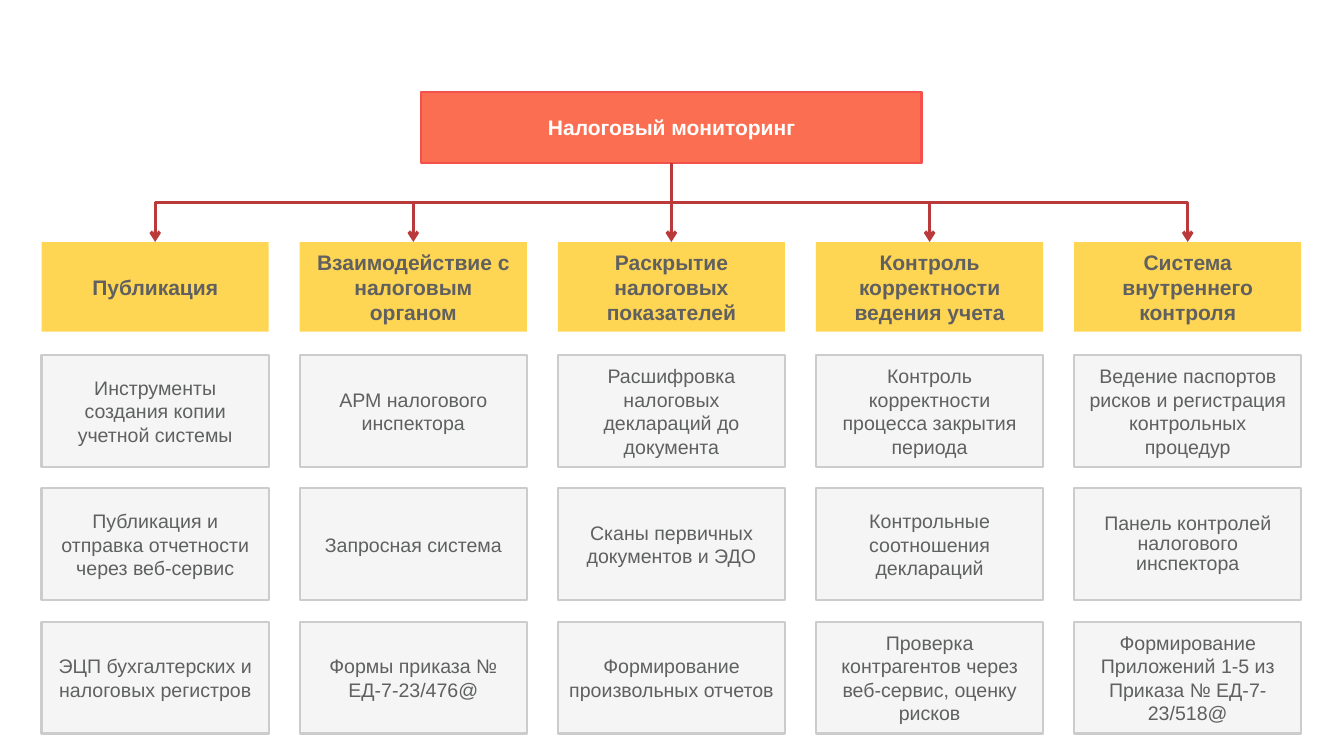
from lxml import etree
from pptx import Presentation
from pptx.dml.color import RGBColor
from pptx.enum.shapes import MSO_CONNECTOR, MSO_SHAPE
from pptx.enum.text import MSO_ANCHOR, MSO_AUTO_SIZE, PP_ALIGN
from pptx.oxml.ns import qn
from pptx.util import Inches, Pt

COLORS = {
    "root": "FC6E51", "root_border": "F3514C", "root_text": "FFFFFF",
    "heading": "FFD653", "heading_text": "606060",
    "card": "F2F2F2", "card_border": "CCCCCC", "card_text": "5F6060",
    "arrow": "BA3A3B",
}

# Grid in inches: five columns, one heading row, three card rows
LEFT, COLUMN_STEP, BOX_WIDTH = 0.39, 2.42, 2.13
HEADING_TOP, HEADING_HEIGHT = 2.27, 0.84
CARD_TOP, CARD_STEP, CARD_HEIGHT = 3.33, 1.25, 1.05
ROOT_WIDTH, ROOT_TOP, ROOT_HEIGHT = 4.69, 0.86, 0.67
CARD_OPACITY = 70

BRANCHES = [
    ("Публикация", [
        "Инструменты создания копии учетной системы",
        "Публикация и отправка отчетности через веб-сервис",
        "ЭЦП бухгалтерских и налоговых регистров"]),
    ("Взаимодействие с налоговым органом", [
        "АРМ налогового инспектора",
        "Запросная система",
        "Формы приказа № ЕД-7-23/476@"]),
    ("Раскрытие налоговых показателей", [
        "Расшифровка налоговых деклараций до документа",
        "Сканы первичных документов и ЭДО",
        "Формирование произвольных отчетов"]),
    ("Контроль корректности ведения учета", [
        "Контроль корректности процесса закрытия периода",
        "Контрольные соотношения деклараций",
        "Проверка контрагентов через веб-сервис, оценку рисков"]),
    ("Система внутреннего контроля", [
        "Ведение паспортов рисков и регистрация контрольных процедур",
        "Панель контролей налогового инспектора",
        "Формирование Приложений 1-5 из Приказа № ЕД-7-23/518@"]),
]
TIGHT_CARD = "Панель контролей налогового инспектора"


def style_box(box, text, role, size, bold):
    """Fill, outline and centre the text of one box of the chart."""
    box.fill.solid()
    box.fill.fore_color.rgb = RGBColor.from_string(COLORS[role])
    if role + "_border" in COLORS:
        box.line.color.rgb = RGBColor.from_string(COLORS[role + "_border"])
        box.line.width = Pt(1.5)
    else:
        box.line.fill.background()
    frame = box.text_frame
    frame.word_wrap = True
    frame.auto_size = MSO_AUTO_SIZE.NONE
    frame.vertical_anchor = MSO_ANCHOR.MIDDLE
    frame.text = text
    paragraph = frame.paragraphs[0]
    paragraph.alignment = PP_ALIGN.CENTER
    paragraph.font.name = "Arial"
    paragraph.font.size = Pt(size)
    paragraph.font.bold = bold
    paragraph.font.color.rgb = RGBColor.from_string(COLORS[role + "_text"])
    return paragraph


def add_box(left, top, height):
    box = slide.shapes.add_shape(
        MSO_SHAPE.RECTANGLE, Inches(left), Inches(top), Inches(BOX_WIDTH), Inches(height))
    box.shadow.inherit = False
    return box


prs = Presentation()
prs.slide_width, prs.slide_height = Inches(12.6), Inches(7.09)
slide = prs.slides.add_slide(prs.slide_layouts.get_by_name("Title Only"))

# Root of the chart, centred over the middle column
root = slide.shapes.title
root_center = LEFT + 2 * COLUMN_STEP + BOX_WIDTH / 2
root.left, root.top = Inches(root_center - ROOT_WIDTH / 2), Inches(ROOT_TOP)
root.width, root.height = Inches(ROOT_WIDTH), Inches(ROOT_HEIGHT)
style_box(root, "Налоговый мониторинг", "root", 14.2, True)

for column, (heading_text, card_texts) in enumerate(BRANCHES):
    left = LEFT + column * COLUMN_STEP

    # Branch heading
    heading = add_box(left, HEADING_TOP, HEADING_HEIGHT)
    style_box(heading, heading_text, "heading", 14.2, True)
    frame = heading.text_frame
    frame.margin_left = frame.margin_right = Inches(0.08)
    frame.margin_top = frame.margin_bottom = Inches(0.08)

    # Cards below the heading
    for row, card_text in enumerate(card_texts):
        card = add_box(left, CARD_TOP + row * CARD_STEP, CARD_HEIGHT)
        paragraph = style_box(card, card_text, "card", 13.2, False)
        if card_text == TIGHT_CARD:
            paragraph.line_spacing = 0.85
        fill_color = card.fill._xPr.find(qn("a:solidFill"))[0]
        etree.SubElement(fill_color, qn("a:alpha"), val=str(CARD_OPACITY * 1000))

    # Elbow arrow from the root, turned so that it leaves downwards
    arrow = slide.shapes.add_connector(MSO_CONNECTOR.ELBOW, 0, 0, 0, 0)
    arrow.begin_connect(root, 2)
    arrow.end_connect(heading, 0)
    start_x, start_y = root.left + root.width // 2, root.top + root.height
    end_x, end_y = heading.left + heading.width // 2, heading.top
    drop, reach = end_y - start_y, abs(end_x - start_x)
    arrow.left = (start_x + end_x - drop) // 2
    arrow.top = (start_y + end_y - reach) // 2
    arrow.width, arrow.height = drop, reach
    goes_right = column > 2
    transform = arrow._element.spPr.find(qn("a:xfrm"))
    transform.set("rot", "16200000" if goes_right else "5400000")
    transform.set("flipH", "1" if goes_right else "0")
    transform.set("flipV", "0")
    arrow.line.color.rgb = RGBColor.from_string(COLORS["arrow"])
    arrow.line.width = Pt(2.25)
    etree.SubElement(arrow.line._get_or_add_ln(), qn("a:tailEnd"), type="arrow")
    etree.SubElement(arrow._element.spPr, qn("a:effectLst"))

prs.save("out.pptx")
